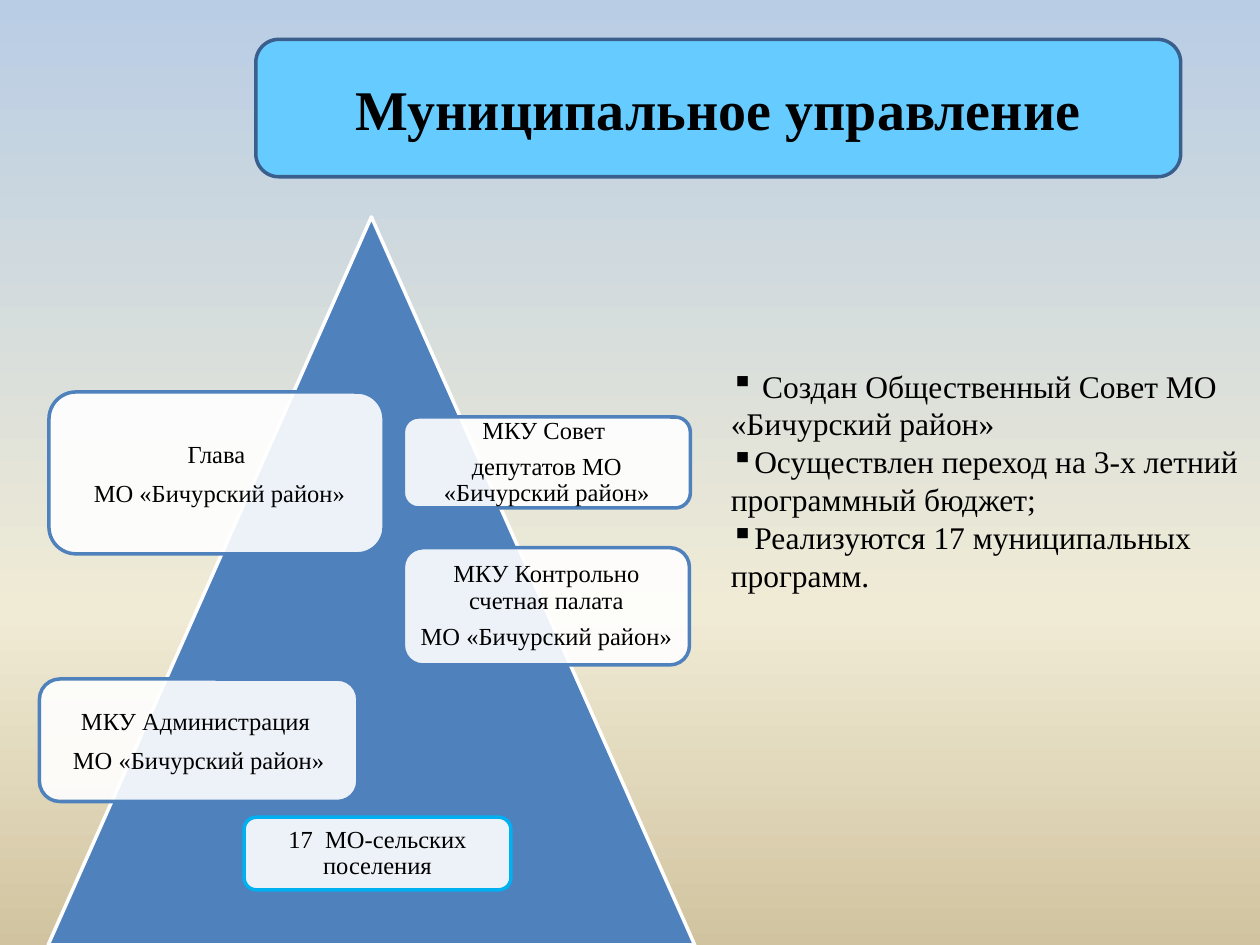
import copy
import pptx
import pptx.dml.color
import pptx.enum.shapes
import pptx.enum.text
import pptx.oxml.ns
import pptx.oxml.xmlchemy
import pptx.util
from pptx.util import Pt

COLORS = {
    "sky": "B9CDE5", "cream": "F0EBD5", "sand": "D1C39F",
    "blue": "4F81BD", "white": "FFFFFF", "cyan": "00B0F0",
    "banner": "66CCFF", "navy": "3A5F8C", "black": "000000",
}
SHAPES = pptx.enum.shapes.MSO_SHAPE
ALIGN = pptx.enum.text.PP_ALIGN
ANCHOR = pptx.enum.text.MSO_ANCHOR
qn = pptx.oxml.ns.qn


def rgb(name):
    return pptx.dml.color.RGBColor.from_string(COLORS[name])


def write(box, lines, size=14, bold=False, align=ALIGN.CENTER, anchor=ANCHOR.MIDDLE,
          inset=(4.3, 4.3), spacing=1.0, after=0, bullet=None):
    frame = box.text_frame
    frame.word_wrap = True
    frame.auto_size = pptx.enum.text.MSO_AUTO_SIZE.NONE
    frame.vertical_anchor = anchor
    frame.margin_left = frame.margin_right = Pt(inset[0])
    frame.margin_top = frame.margin_bottom = Pt(inset[1])
    for index, line in enumerate(lines):
        para = frame.paragraphs[0] if index == 0 else frame.add_paragraph()
        para.alignment = align
        para.line_spacing = spacing
        para.space_before = Pt(0)
        para.space_after = Pt(after)
        if bullet:
            mark = para._p.get_or_add_pPr().makeelement(qn("a:buChar"), {"char": bullet})
            para._p.get_or_add_pPr().append(mark)
        span = para.add_run()
        span.text = line
        span.font.name = "Times New Roman"
        span.font.size = Pt(size)
        span.font.bold = bold
        span.font.color.rgb = rgb("black")


deck = pptx.Presentation()
deck.slide_width, deck.slide_height = Pt(720), Pt(540)
page = deck.slides.add_slide(deck.slide_layouts[5])

backdrop = page.background.fill
backdrop.gradient()
backdrop.gradient_angle = 270
first_stop = next(page._element.iter(qn("a:gs")))
first_stop.addnext(copy.deepcopy(first_stop))
for stop, (name, position) in zip(backdrop.gradient_stops,
                                  [("sky", 0), ("cream", 0.65), ("sand", 1)]):
    stop.color.rgb = rgb(name)
    stop.position = position

council = ["МКУ Совет ", "депутатов МО «Бичурский район»"]
audit = ["МКУ Контрольно счетная палата", "МО «Бичурский район»"]
head = ["Глава", " МО «Бичурский район»"]
administration = ["МКУ Администрация ", "МО «Бичурский район»"]
settlements = ["17  МО-сельских поселения"]

pieces = [
    (SHAPES.ISOSCELES_TRIANGLE, (27.5, 124, 369.5, 416), "blue", "white", [], 1),
    (SHAPES.ROUNDED_RECTANGLE, (230.5, 238.3, 164, 52), "white", "blue", council, 0.9),
    (SHAPES.ROUNDED_RECTANGLE, (230.5, 313, 163.5, 67), "white", "blue", audit, 0.9),
    (SHAPES.ROUNDED_RECTANGLE, (28, 224, 191.5, 92.5), "white", "blue", head, 1),
    (SHAPES.ROUNDED_RECTANGLE, (22.5, 388, 182, 70), "white", "blue", administration, 1),
    (SHAPES.ROUNDED_RECTANGLE, (139.5, 467, 152.5, 41.5), "white", "cyan", settlements, 0.9),
    (SHAPES.ROUNDED_RECTANGLE, (146.2, 22.5, 528.5, 78.5), "banner", "navy", [], 1),
]
for kind, bounds, fill, line, lines, spacing in pieces:
    shape = page.shapes.add_shape(kind, *map(Pt, bounds))
    shape.shadow.inherit = False
    shape.fill.solid()
    shape.fill.fore_color.rgb = rgb(fill)
    shape.line.color.rgb = rgb(line)
    shape.line.width = Pt(2)
    if fill == "white":
        color = shape._element.spPr.find(qn("a:solidFill"))[0]
        color.append(color.makeelement(qn("a:alpha"), {"val": "90000"}))
    if lines:
        write(shape, lines, spacing=spacing, after=5.6)

title = page.shapes.title
title.left, title.top, title.width, title.height = map(Pt, (146.2, 22.5, 528.5, 78.5))
write(title, ["Муниципальное управление"], size=32, bold=True, inset=(7.2, 3.6))
page.shapes._spTree.append(title._element)

results = page.shapes.add_textbox(*map(Pt, (410.5, 206, 309.5, 138)))
write(results, [
    " Создан Общественный Совет МО «Бичурский район»",
    "Осуществлен переход на 3-х летний программный бюджет;",
    "Реализуются 17 муниципальных программ.",
], size=18, align=ALIGN.LEFT, anchor=ANCHOR.TOP, inset=(7.2, 3.6), bullet="▪")

deck.save("out.pptx")
